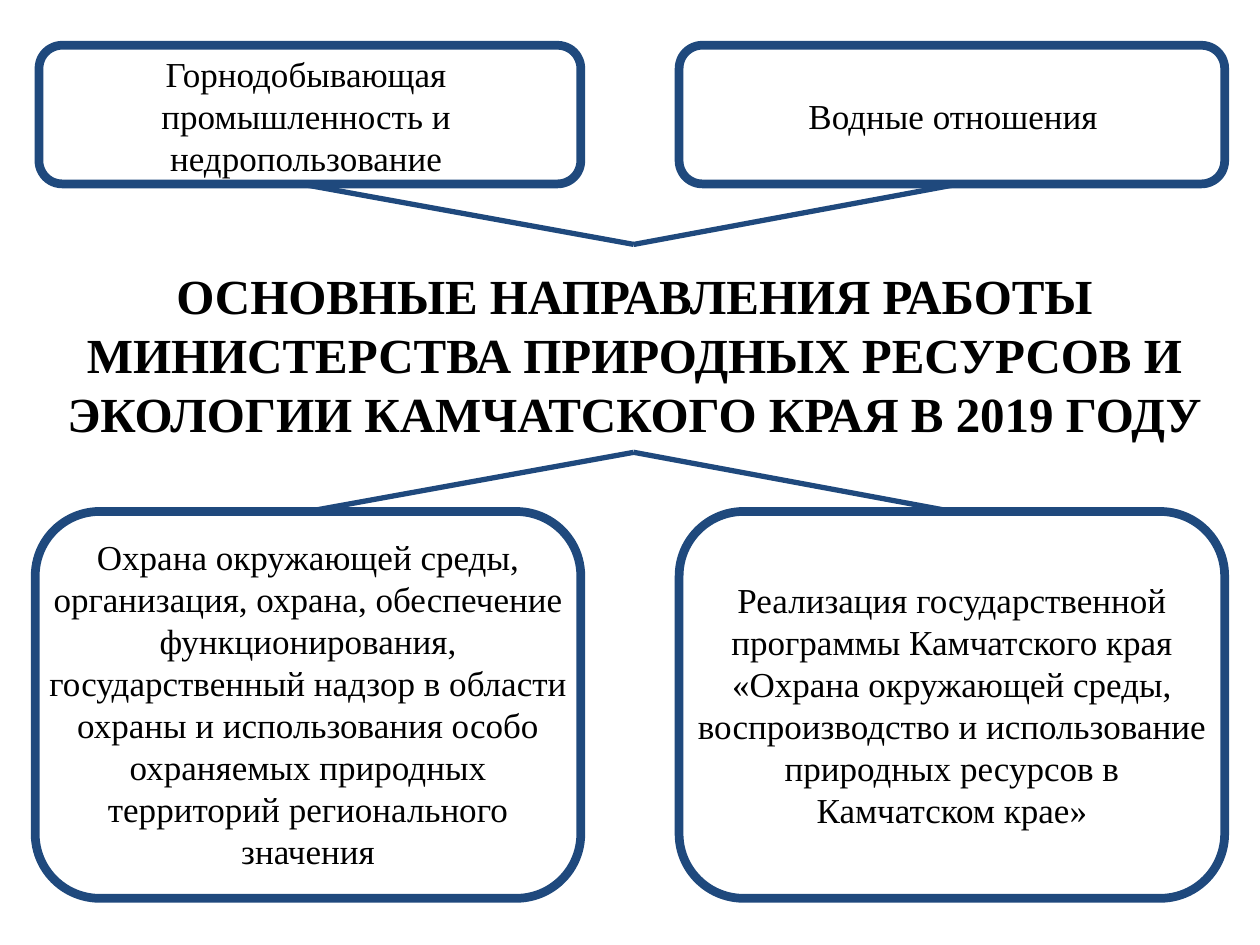
"""Build a slide of four work areas around a central title."""
import dataclasses

import pptx
import pptx.dml.color
import pptx.enum.shapes
import pptx.enum.text
import pptx.oxml.ns
import pptx.util


@dataclasses.dataclass(frozen=True)
class Theme:
    font: str = "Times New Roman"
    ink: str = "000000"
    accent: str = "1F497D"
    title_size: int = 28
    body_size: int = 20
    frame_width: int = 5
    link_width: int = 3


class Board:
    COLUMNS, ROWS = 100, 75

    def __init__(self, deck, theme):
        self.theme = theme
        self.column = deck.slide_width / self.COLUMNS
        self.row = deck.slide_height / self.ROWS
        self.slide = deck.slides.add_slide(deck.slide_layouts[5])

    def place(self, x, y):
        return round(x * self.column), round(y * self.row)

    def area(self, left, top, width, height):
        return *self.place(left, top), *self.place(width, height)

    def set_text(self, frame, text, size, bold=False):
        frame.word_wrap = True
        frame.text = text
        paragraph = frame.paragraphs[0]
        paragraph.alignment = pptx.enum.text.PP_ALIGN.CENTER
        paragraph.font.name = self.theme.font
        paragraph.font.size = pptx.util.Pt(size)
        paragraph.font.bold = bold
        paragraph.font.color.rgb = pptx.dml.color.RGBColor.from_string(self.theme.ink)

    def stroke(self, line, width):
        line.color.rgb = pptx.dml.color.RGBColor.from_string(self.theme.accent)
        line.width = pptx.util.Pt(width)

    def title(self, text, *area):
        heading = self.slide.shapes.title
        heading.left, heading.top, heading.width, heading.height = self.area(*area)
        self.set_text(heading.text_frame, text, self.theme.title_size, bold=True)
        heading.text_frame.auto_size = pptx.enum.text.MSO_AUTO_SIZE.NONE
        heading.text_frame.vertical_anchor = pptx.enum.text.MSO_ANCHOR.MIDDLE

    def label(self, text, *area):
        caption = self.slide.shapes.add_textbox(*self.area(*area))
        self.set_text(caption.text_frame, text, self.theme.body_size)
        caption.text_frame.auto_size = pptx.enum.text.MSO_AUTO_SIZE.SHAPE_TO_FIT_TEXT

    def frame(self, *area):
        border = self.slide.shapes.add_shape(
            pptx.enum.shapes.MSO_SHAPE.ROUNDED_RECTANGLE, *self.area(*area))
        border.shadow.inherit = False
        border.fill.background()
        self.stroke(border.line, self.theme.frame_width)

    def link(self, start, end):
        branch = self.slide.shapes.add_connector(
            pptx.enum.shapes.MSO_CONNECTOR.STRAIGHT, *self.place(*start), *self.place(*end))
        self.stroke(branch.line, self.theme.link_width)
        properties = branch._element.spPr
        properties.append(properties.makeelement(pptx.oxml.ns.qn("a:effectLst"), {}))


AREAS = [
    ("Охрана окружающей среды, организация, охрана, обеспечение функционирования, "
     "государственный надзор в области охраны и использования особо охраняемых "
     "природных территорий регионального значения",
     (2.8, 42, 43.3, 27.9), (2.8, 40.6, 43.3, 30.7)),
    ("Водные отношения", (54, 7, 43.3, 4.4), (53.9, 3.6, 43.3, 11)),
    ("Горнодобывающая промышленность и недропользование",
     (2.8, 3.7, 43, 11.1), (3.1, 3.6, 43, 11)),
    ("Реализация государственной программы Камчатского края «Охрана окружающей "
     "среды, воспроизводство и использование природных ресурсов в Камчатском крае»",
     (53.9, 45.4, 43.3, 21.2), (53.9, 40.6, 43.3, 30.7)),
]
HUB, BRANCHES = 50.3, (75.6, 24.4)
LEVELS = [(35.9, 40.6), (19.4, 14.7)]


def main():
    deck = pptx.Presentation()
    deck.slide_width, deck.slide_height = pptx.util.Inches(10), pptx.util.Inches(7.5)
    board = Board(deck, Theme())
    for text, label_area, _ in AREAS:
        board.label(text, *label_area)
    for hub_row, frame_row in LEVELS:
        for branch in BRANCHES:
            board.link((HUB, hub_row), (branch, frame_row))
    for _, _, frame_area in AREAS:
        board.frame(*frame_area)
    board.title("ОСНОВНЫЕ НАПРАВЛЕНИЯ РАБОТЫ\vМИНИСТЕРСТВА ПРИРОДНЫХ РЕСУРСОВ И "
                "ЭКОЛОГИИ КАМЧАТСКОГО КРАЯ В 2019 ГОДУ", 3.1, 20.3, 94.5, 15.6)
    deck.save("out.pptx")


if __name__ == "__main__":
    main()
